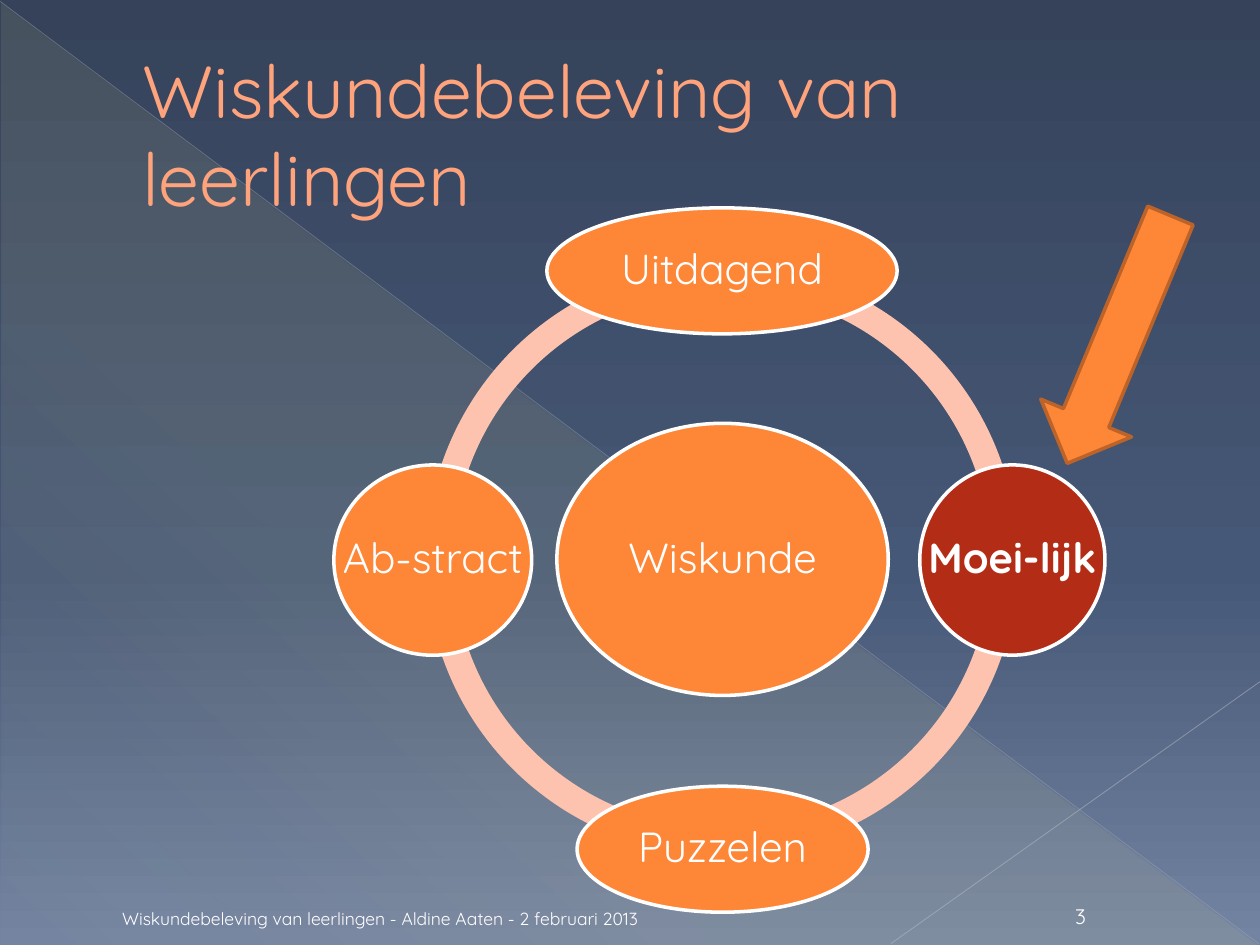
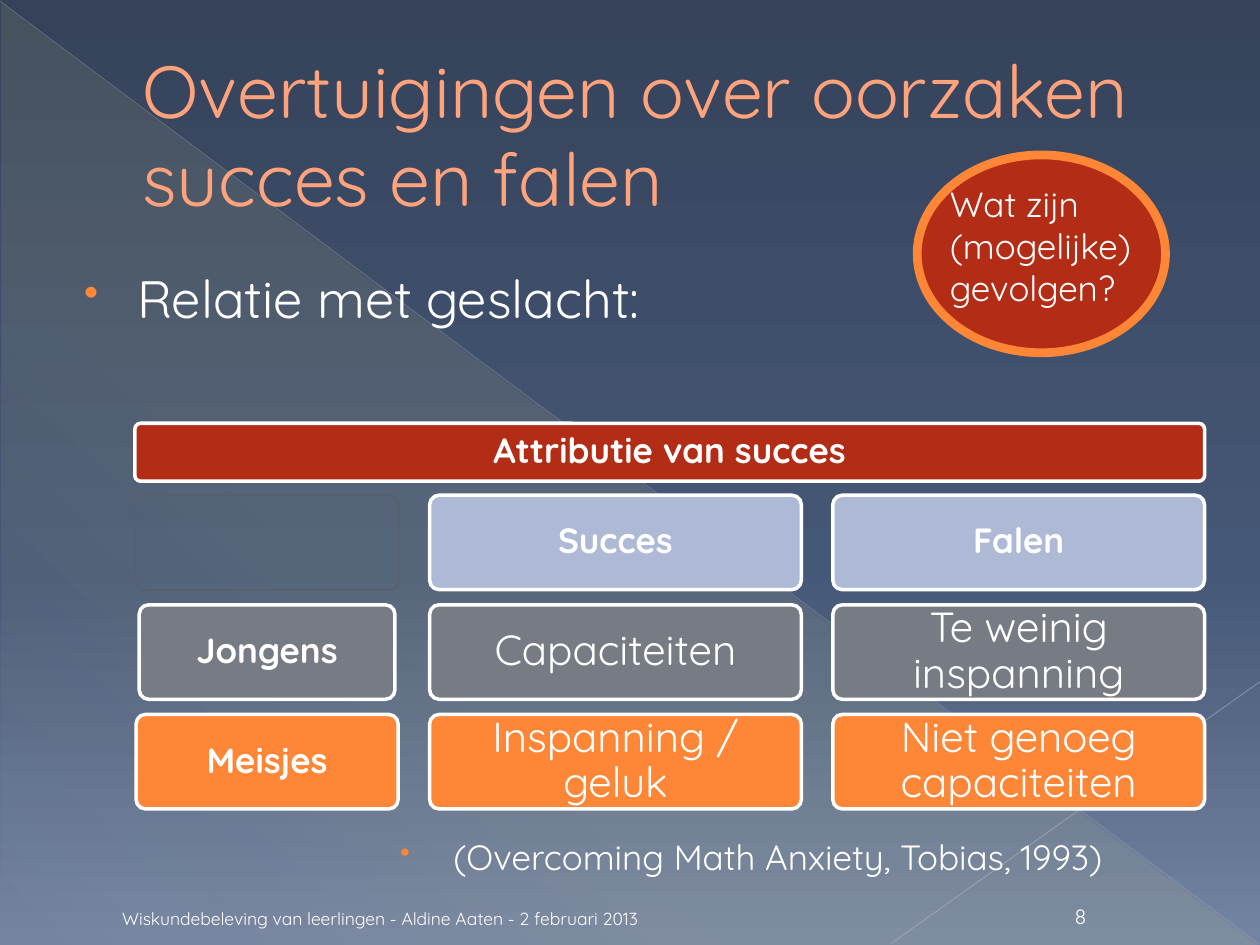
import pptx
import pptx.util
import pptx.dml.color
import pptx.enum.shapes
import pptx.enum.text
import pptx.oxml.ns
import lxml.etree

Inches = pptx.util.Inches
Pt = pptx.util.Pt
qn = pptx.oxml.ns.qn
KIND = pptx.enum.shapes.MSO_SHAPE
ALIGN = pptx.enum.text.PP_ALIGN
ANCHOR = pptx.enum.text.MSO_ANCHOR

FONT = "Quicksand"
HUE = {
    "top": "35425A", "mid": "465877", "base": "7383A2", "glow": "FFF39D",
    "slant": "BABDC4", "short": "C1C4CA", "title": "FFA37C", "white": "FFFFFF",
    "ring": "FEC3AE", "orange": "FE8637", "rust": "BC6329", "red": "B32C16",
    "grey": "777C84", "blue": "AEBAD5", "dim": "575F6D",
}
FOOTER = "Wiskundebeleving van leerlingen - Aldine Aaten - 2 februari 2013"
SKY = [(0, "top", 100), (60, "mid", 100), (100, "base", 100)]
SHEEN = [(0, "glow", 10), (70, "glow", 8), (100, "glow", 1)]
RAYS = [
    ((0, 0.01), (9.99, 7.49), "slant", 0.39, 35),
    ((10, 5.41), (7.07, 7.49), "short", 0.47, 45),
]

RING = (3.38, 2.09, 4.7, 4.7)
NODES = [
    ("Wiskunde", (4.42, 3.36, 2.63, 2.16), "orange"),
    ("Uitdagend", (4.34, 1.65, 2.78, 1), "orange"),
    ("Moei-lijk", (7.3, 3.69, 1.47, 1.51), "red"),
    ("Puzzelen", (4.58, 6.24, 2.31, 1), "orange"),
    ("Ab-stract", (2.65, 3.69, 1.57, 1.51), "orange"),
]

HEAD = "Attributie van succes"
GRID = [
    ("blue", 2.09, ["", "Succes", "Falen"]),
    ("grey", 2.03, ["Jongens", "Capaciteiten", "Te weinig inspanning"]),
    ("orange", 2.08, ["Meisjes", "Inspanning / geluk", "Niet genoeg capaciteiten"]),
]
LABEL_MID = 2.12
CELL_X, CELL_W, CELL_H = 3.41, 2.95, 0.75
COL_STEP, ROW_Y, ROW_STEP = 3.2, 3.93, 0.87


def rgb(name):
    return pptx.dml.color.RGBColor.from_string(HUE[name])


def lengths(box):
    return [Inches(n) for n in box]


def fade(color, alpha):
    node = lxml.etree.SubElement(color, qn("a:alpha"))
    node.set("val", str(alpha * 1000))


def blend(fill, root, stops, angle):
    fill.gradient()
    grad = root.find(".//" + qn("a:gradFill"))
    grad.find(qn("a:lin")).set("ang", str(angle * 60000))
    items = grad.find(qn("a:gsLst"))
    for old in list(items):
        items.remove(old)
    for pos, name, alpha in stops:
        stop = lxml.etree.SubElement(items, qn("a:gs"), pos=str(pos * 1000))
        color = lxml.etree.SubElement(stop, qn("a:srgbClr"), val=HUE[name])
        if alpha < 100:
            fade(color, alpha)


def write(shape, text, size=24, color="white", bold=False, align=ALIGN.LEFT,
          anchor=ANCHOR.TOP, wrap=True, pad=None, left=0, hang=0, bullet=False,
          space=None):
    frame = shape.text_frame
    frame.auto_size = pptx.enum.text.MSO_AUTO_SIZE.NONE
    frame.word_wrap = wrap
    frame.vertical_anchor = anchor
    if pad is not None:
        frame.margin_left = frame.margin_right = Inches(pad)
        frame.margin_top = frame.margin_bottom = Inches(pad)
    para = frame.paragraphs[0]
    para.alignment = align
    if space:
        para.line_spacing = space
    props = para._p.get_or_add_pPr()
    props.set("marL", str(Inches(left)))
    props.set("indent", str(Inches(hang)))
    if bullet:
        tint = lxml.etree.SubElement(props, qn("a:buClr"))
        lxml.etree.SubElement(tint, qn("a:srgbClr"), val=HUE["orange"])
        lxml.etree.SubElement(props, qn("a:buSzPct"), val="80000")
        lxml.etree.SubElement(props, qn("a:buChar"), char="•")
    run = para.add_run()
    run.text = text
    font = run.font
    font.name, font.size, font.bold = FONT, Pt(size), bold
    font.color.rgb = rgb(color)


def label(slide, box, text, **style):
    write(slide.shapes.add_textbox(*lengths(box)), text, **style)


def draw(slide, kind, box, fill=None, line=None, width=2):
    shape = slide.shapes.add_shape(kind, *lengths(box))
    shape.shadow.inherit = False
    if fill:
        shape.fill.solid()
        shape.fill.fore_color.rgb = rgb(fill)
    else:
        shape.fill.background()
    if line:
        shape.line.color.rgb = rgb(line)
        shape.line.width = Pt(width)
    else:
        shape.line.fill.background()
    return shape


def ray(slide, start, end, color, width, alpha):
    line = slide.shapes.add_connector(
        pptx.enum.shapes.MSO_CONNECTOR.STRAIGHT, *lengths(start + end))
    line.line.color.rgb = rgb(color)
    line.line.width = Pt(width)
    props = line._element.spPr
    fade(props.find(".//" + qn("a:srgbClr")), alpha)
    lxml.etree.SubElement(props, qn("a:effectLst"))


def start(deck, title, number):
    slide = deck.slides.add_slide(deck.slide_layouts[5])
    sheen = draw(slide, KIND.RIGHT_TRIANGLE, (0.01, 0.02, 9.98, 7.48))
    blend(sheen.fill, sheen._element.spPr, SHEEN, 133)
    for item in RAYS:
        ray(slide, *item)
    head = slide.shapes.title
    head.left, head.top, head.width, head.height = lengths((0.5, 0.29, 9, 1.53))
    write(head, title, size=42, color="title", anchor=ANCHOR.MIDDLE, left=0.53)
    slide.shapes._spTree.append(head._element)
    label(slide, (0.5, 7.09, 4.66, 0.33), FOOTER, size=10,
          align=ALIGN.RIGHT, anchor=ANCHOR.BOTTOM)
    label(slide, (8.3, 7.09, 0.55, 0.33), str(number), size=12,
          align=ALIGN.CENTER, anchor=ANCHOR.BOTTOM)
    return slide


def cycle(deck):
    slide = start(deck, "Wiskundebeleving van leerlingen", 3)
    for part in range(4):
        arc = draw(slide, KIND.BLOCK_ARC, RING, "ring")
        arc.adjustments[0] = part * 54
        arc.adjustments[1] = (part + 1) % 4 * 54
        arc.adjustments[2] = 0.046
    for text, box, fill in NODES:
        node = draw(slide, KIND.OVAL, box, fill, "white")
        write(node, text, bold=fill == "red", align=ALIGN.CENTER,
              anchor=ANCHOR.MIDDLE, wrap=False, pad=0.03, space=0.9)
    arrow = draw(slide, KIND.DOWN_ARROW, (8.49, 1.63, 0.78, 2.13), "orange", "rust")
    arrow.rotation = 22.6


def cell(slide, box, text, fill, strong):
    if text:
        shape = draw(slide, KIND.ROUNDED_RECTANGLE, box, fill, "white")
        write(shape, text, size=20 if strong else 24, bold=strong,
              align=ALIGN.CENTER, anchor=ANCHOR.MIDDLE,
              pad=0.08 if strong else 0.1, space=0.9)
    else:
        shape = draw(slide, KIND.ROUNDED_RECTANGLE, box, line="dim", width=0)
    shape.adjustments[0] = 0.1


def causes(deck):
    slide = start(deck, "Overtuigingen over oorzaken succes en falen", 8)
    label(slide, (0.5, 2.06, 9, 1.93), "Relatie met geslacht:", size=30,
          left=0.49, hang=-0.42, bullet=True)
    cell(slide, (1.07, 3.36, 8.49, 0.46), HEAD, "red", True)
    for row, (fill, wide, texts) in enumerate(GRID):
        y = ROW_Y + row * ROW_STEP
        for col, text in enumerate(texts):
            x, w = CELL_X + (col - 1) * COL_STEP, CELL_W
            if col == 0:
                x, w = LABEL_MID - wide / 2, wide
            cell(slide, (x, y, w, CELL_H), text, fill, row == 0 or col == 0)
    label(slide, (0.51, 6.58, 9, 0.55), "(Overcoming Math Anxiety, Tobias, 1993)",
          size=20, left=2.99, hang=-0.42, bullet=True)
    draw(slide, KIND.OVAL, (7.28, 1.23, 1.97, 1.57), "red", "orange", 5)
    label(slide, (7.44, 1.4, 2.05, 1.11), "Wat zijn (mogelijke) gevolgen?", size=20)


def main():
    deck = pptx.Presentation()
    deck.slide_width, deck.slide_height = Inches(10), Inches(7.5)
    master = deck.slide_master
    blend(master.background.fill, master._element.cSld, SKY, 90)
    cycle(deck)
    causes(deck)
    deck.save("out.pptx")


if __name__ == "__main__":
    main()
